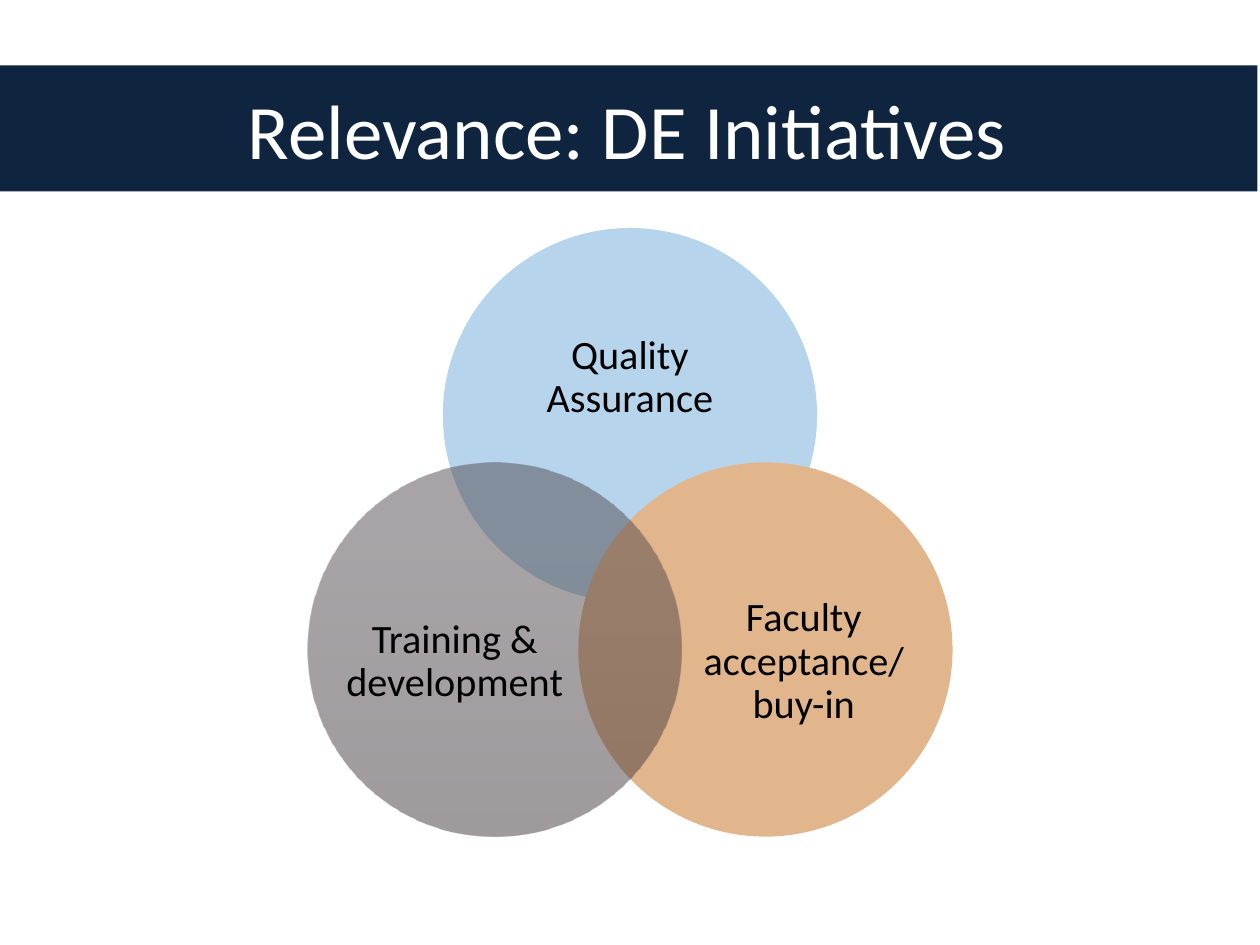
from pptx import Presentation
from pptx.dml.color import RGBColor
from pptx.enum.shapes import MSO_SHAPE as Shape
from pptx.enum.text import MSO_ANCHOR as Anchor, PP_ALIGN as Align
from pptx.oxml.ns import qn
from pptx.util import Pt
from lxml import etree

COLOURS = {
    "navy": "0F243E",
    "blue": "B6D5EC",
    "orange": "E1B68C",
    "grey_dark": "3F373B",
    "grey": "52484D",
    "white": "FFFFFF",
    "black": "000000",
}


def rgb(name):
    return RGBColor.from_string(COLOURS[name])


class VennSlide:
    font = "Calibri"
    title_size = 44
    label_size = 23
    diameter = 213.84

    def __init__(self, deck):
        self.page = deck.slides.add_slide(deck.slide_layouts[6])

    def shape(self, kind, left, top, width, height):
        shape = self.page.shapes.add_shape(
            kind, Pt(left), Pt(top), Pt(width), Pt(height))
        shape.shadow.inherit = False
        shape.line.fill.background()
        return shape

    def centred_text(self, box, text, size, colour):
        frame = box.text_frame
        frame.word_wrap = True
        frame.vertical_anchor = Anchor.MIDDLE
        para = frame.paragraphs[0]
        para.text = text
        para.alignment = Align.CENTER
        para.font.name = self.font
        para.font.size = Pt(size)
        para.font.color.rgb = rgb(colour)
        return para

    def banner(self, text, left, top, width, height):
        box = self.shape(Shape.RECTANGLE, left, top, width, height)
        box.fill.solid()
        box.fill.fore_color.rgb = rgb("navy")
        self.centred_text(box, text, self.title_size, "white")

    def circle(self, centre_x, centre_y):
        radius = self.diameter / 2
        return self.shape(Shape.OVAL, centre_x - radius, centre_y - radius,
                          self.diameter, self.diameter)

    def solid_circle(self, centre_x, centre_y, colour):
        circle = self.circle(centre_x, centre_y)
        circle.fill.solid()
        circle.fill.fore_color.rgb = rgb(colour)

    def glass_circle(self, centre_x, centre_y, stops):
        """Half-transparent circle shaded from the bottom upwards."""
        circle = self.circle(centre_x, centre_y)
        circle.fill.gradient()
        circle.fill.gradient_angle = 90
        for stop, (position, colour) in zip(circle.fill.gradient_stops, stops):
            stop.position = position
            stop.color.rgb = rgb(colour)
        for colour in circle._element.spPr.iter(qn("a:srgbClr")):
            etree.SubElement(colour, qn("a:alpha"), val="50000")

    def label(self, text, left, top, width, height):
        box = self.page.shapes.add_textbox(
            Pt(left), Pt(top), Pt(width), Pt(height))
        frame = box.text_frame
        frame.margin_left = frame.margin_right = 0
        frame.margin_top = frame.margin_bottom = 0
        para = self.centred_text(box, text, self.label_size, "black")
        para.line_spacing = 0.9


def main():
    deck = Presentation()
    deck.slide_width, deck.slide_height = Pt(720), Pt(540)
    slide = VennSlide(deck)

    # Title band
    slide.banner("Relevance: DE Initiatives", -1.44, 37.44, 720, 72)

    # Three overlapping circles, the lower two mirrored about the middle
    middle, upper, lower = 360, 237.24, 371.16
    offset = 77.4
    label_top, label_width, label_height = 319.68, 128.16, 117.36

    slide.solid_circle(middle, upper, "blue")
    slide.label("Quality Assurance", 281.52, 167.76, 156.96, 96.48)

    slide.solid_circle(middle + offset, lower, "orange")
    slide.label("Faculty acceptance/ buy-in",
                395.28, label_top, label_width, label_height)

    slide.glass_circle(middle - offset, lower,
                       [(0, "grey_dark"), (0.8, "grey")])
    slide.label("Training & development",
                195.84, label_top, label_width, label_height)

    deck.save("out.pptx")


if __name__ == "__main__":
    main()
